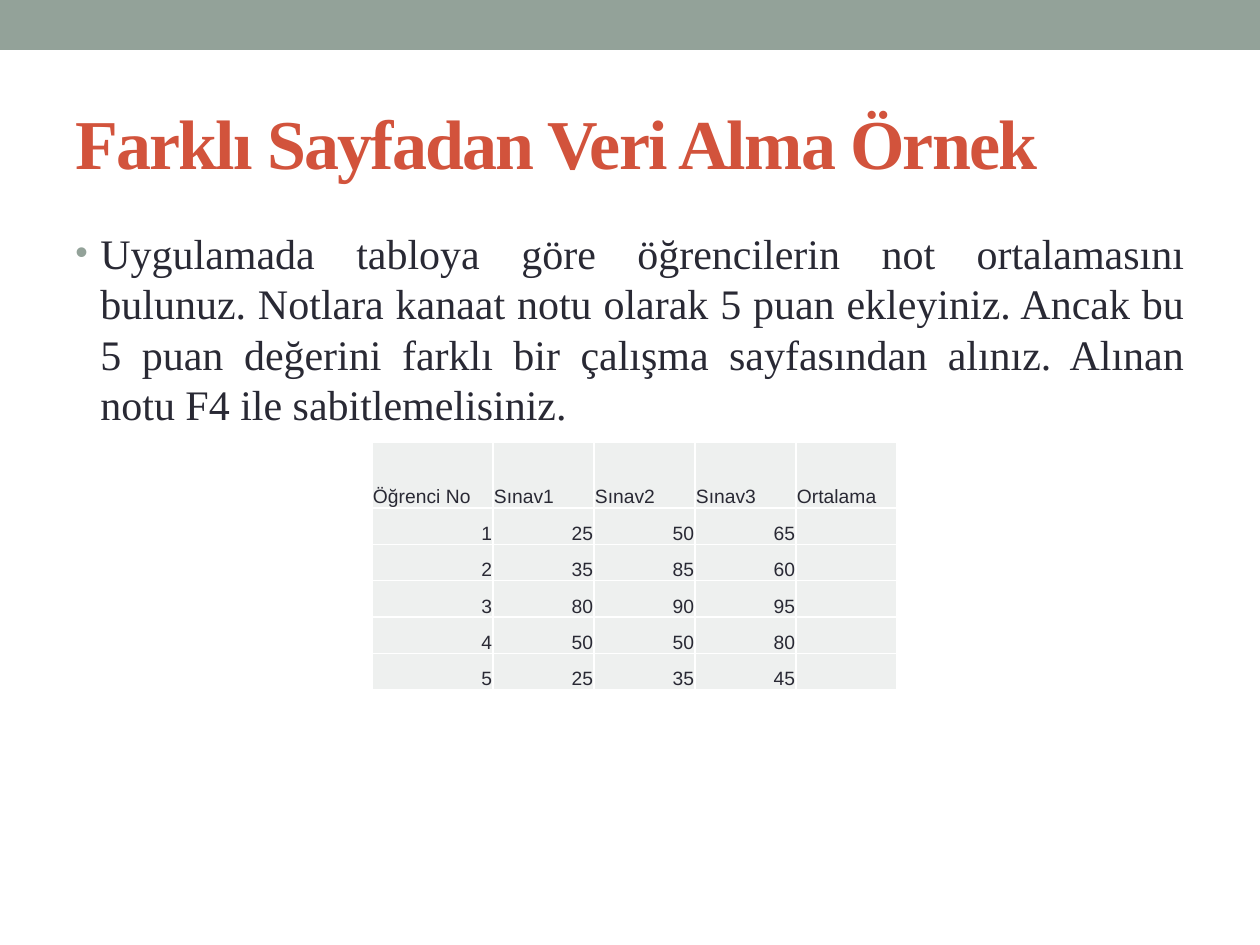
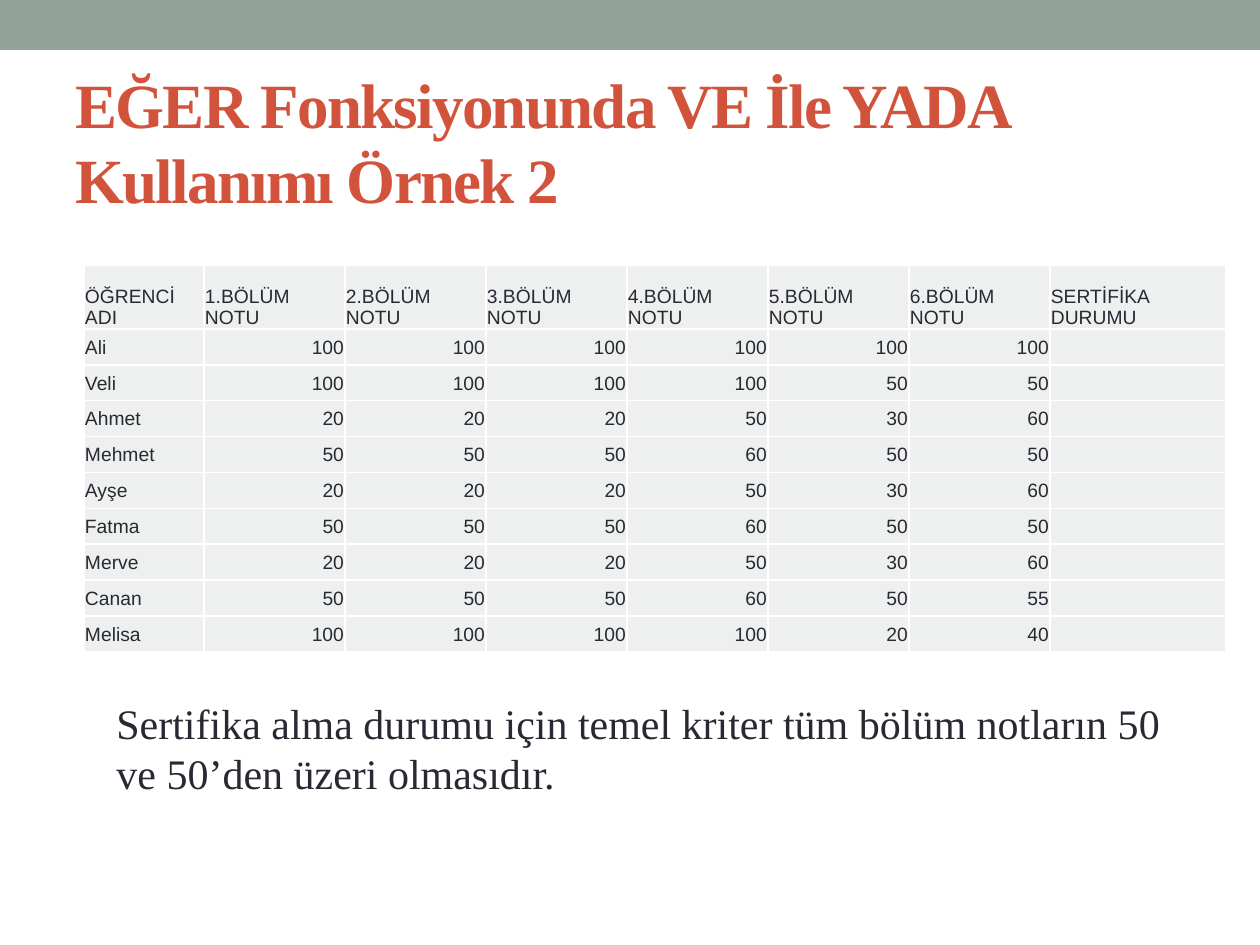
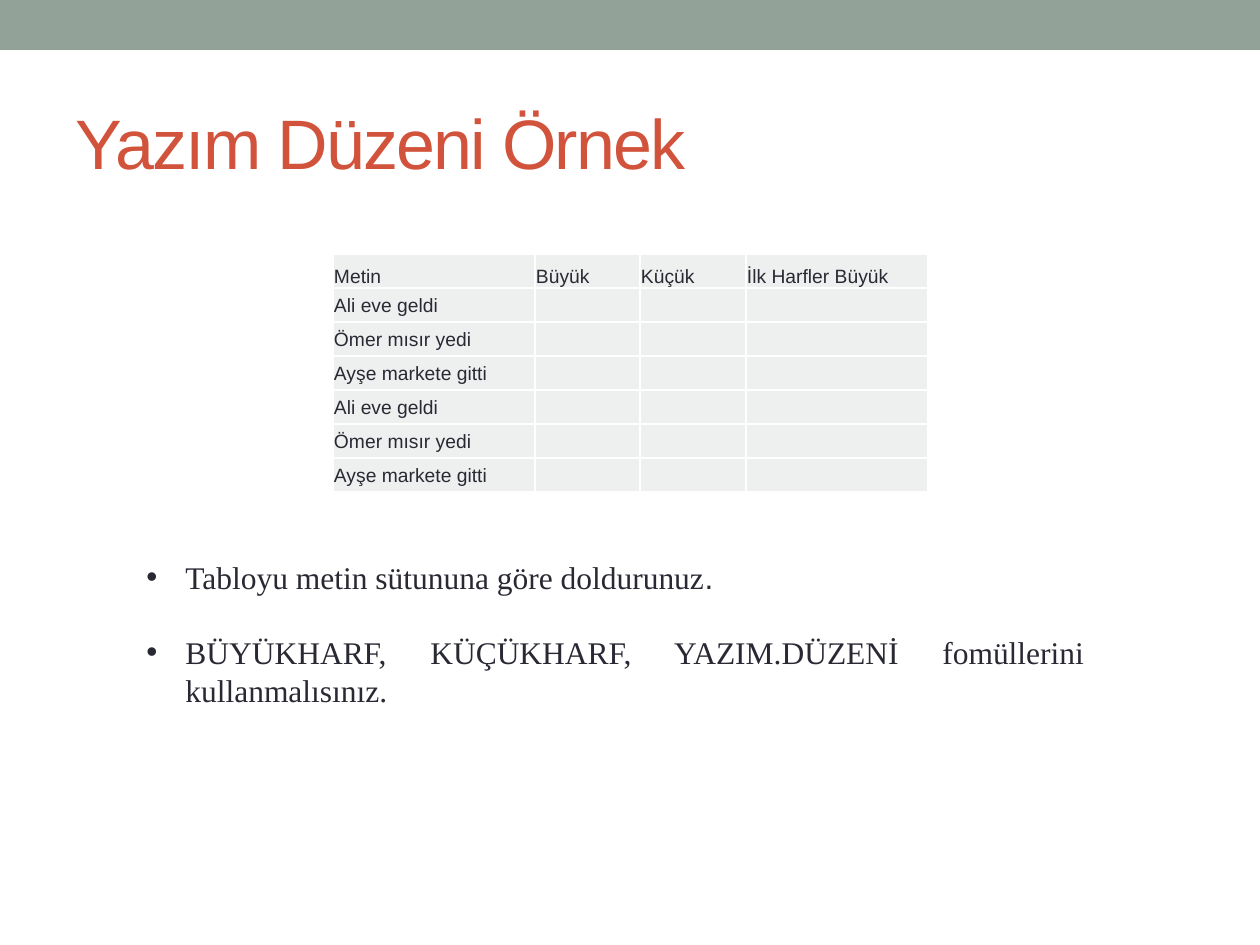
"""Build three spreadsheet exercise slides, each with a title, a table and instructions."""
from lxml.etree import SubElement
from pptx import Presentation
from pptx.dml.color import RGBColor
from pptx.enum.shapes import MSO_SHAPE
from pptx.enum.text import MSO_ANCHOR, PP_ALIGN
from pptx.oxml.ns import qn
from pptx.util import Pt

SCALE = 914400 / 126
SLIDE_SIZE = (1260, 945)
BAND_BOX = (0, 0, 1260, 50)
TITLE_BOX = (63, 73, 1134, 136)

SAGE, RUST, INK, PALE, WHITE = "93A299", "D2533C", "292934", "EEF0EF", "FFFFFF"
SERIF, SANS = "Times New Roman", "Arial"
CELL_FONT = dict(name=SANS, size=11, color=INK)

SLIDES = [
    dict(
        title=("Farklı Sayfadan Veri Alma Örnek", dict(name=SERIF, size=40, bold=True)),
        table=dict(
            place=(372, 442), columns=[121] + [101] * 4, height=248, header=66,
            anchor=MSO_ANCHOR.BOTTOM,
            rows=[
                ("Öğrenci No", "Sınav1", "Sınav2", "Sınav3", "Ortalama"),
                (1, 25, 50, 65, ""),
                (2, 35, 85, 60, ""),
                (3, 80, 90, 95, ""),
                (4, 50, 50, 80, ""),
                (5, 25, 35, 45, ""),
            ],
        ),
        text=dict(
            box=(63, 221, 1134, 671), size=24, align=PP_ALIGN.JUSTIFY,
            bullet=dict(indent=25, color=SAGE, percent=85), before=[5],
            paragraphs=[[(
                "Uygulamada tabloya göre öğrencilerin not ortalamasını bulunuz. "
                "Notlara kanaat notu olarak 5 puan ekleyiniz. Ancak bu 5 puan değerini "
                "farklı bir çalışma sayfasından alınız. Alınan notu F4 ile "
                "sabitlemelisiniz.", SERIF)]],
        ),
    ),
    dict(
        title=("EĞER Fonksiyonunda VE İle YADA Kullanımı Örnek 2",
               dict(name=SERIF, size=36, bold=True)),
        table=dict(
            place=(84, 265), columns=[120] + [141] * 6 + [176], height=387, header=64,
            anchor=MSO_ANCHOR.MIDDLE,
            rows=[
                ("ÖĞRENCİ ADI", *(f"{part}.BÖLÜM NOTU" for part in range(1, 7)),
                 "SERTİFİKA DURUMU"),
                ("Ali", 100, 100, 100, 100, 100, 100, ""),
                ("Veli", 100, 100, 100, 100, 50, 50, ""),
                ("Ahmet", 20, 20, 20, 50, 30, 60, ""),
                ("Mehmet", 50, 50, 50, 60, 50, 50, ""),
                ("Ayşe", 20, 20, 20, 50, 30, 60, ""),
                ("Fatma", 50, 50, 50, 60, 50, 50, ""),
                ("Merve", 20, 20, 20, 50, 30, 60, ""),
                ("Canan", 50, 50, 50, 60, 50, 55, ""),
                ("Melisa", 100, 100, 100, 100, 20, 40, ""),
            ],
        ),
        text=dict(
            box=(104, 691, 1101, 115), size=24, align=PP_ALIGN.LEFT,
            bullet=None, before=[0],
            paragraphs=[[(
                "Sertifika alma durumu için temel kriter tüm bölüm notların 50 "
                "ve 50’den üzeri olmasıdır.", SERIF)]],
        ),
    ),
    dict(
        title=("Yazım Düzeni Örnek", dict(name=SANS, size=40, bold=False)),
        table=dict(
            place=(333, 254), columns=[202, 105, 106, 182], height=238, header=34,
            anchor=MSO_ANCHOR.MIDDLE,
            rows=[("Metin", "Büyük", "Küçük", "İlk Harfler Büyük")] + [
                (sentence, "", "", "")
                for sentence in ("Ali eve geldi", "Ömer mısır yedi", "Ayşe markete gitti") * 2
            ],
        ),
        text=dict(
            box=(134, 552, 963, 204), size=18, align=PP_ALIGN.JUSTIFY,
            bullet=dict(indent=39, color=INK, percent=100), before=[0, 21],
            paragraphs=[
                [("Tabloyu metin sütununa göre doldurunuz", SERIF), (".", SANS)],
                [("BÜYÜKHARF, KÜÇÜKHARF, YAZIM.DÜZENİ fomüllerini kullanmalısınız.", SERIF)],
            ],
        ),
    ),
]


def px(length):
    return round(length * SCALE)


def rgb(color):
    return RGBColor.from_string(color)


def assign(target, values):
    for attribute, value in values.items():
        setattr(target, attribute, value)


def style(font, name, size, color, bold=False):
    assign(font, dict(name=name, size=Pt(size), bold=bold))
    font.color.rgb = rgb(color)


def add_run(paragraph, words, **look):
    run = paragraph.add_run()
    run.text = words
    style(run.font, **look)
    return run


def add_frame(slide, box, anchor):
    frame = slide.shapes.add_textbox(*map(px, box)).text_frame
    assign(frame, dict(word_wrap=True, vertical_anchor=anchor))
    return frame


def add_band(slide):
    band = slide.shapes.add_shape(MSO_SHAPE.RECTANGLE, *map(px, BAND_BOX))
    band.shadow.inherit = False
    band.fill.solid()
    band.fill.fore_color.rgb = rgb(SAGE)
    band.line.fill.background()


def add_title(slide, words, look):
    frame = add_frame(slide, TITLE_BOX, MSO_ANCHOR.MIDDLE)
    run = add_run(frame.paragraphs[0], words, color=RUST, **look)
    run.font._element.set("spc", "-100")


def add_bullet(paragraph, indent, color, percent):
    properties = paragraph._p.get_or_add_pPr()
    properties.set("marL", str(px(indent)))
    properties.set("indent", str(-px(indent)))
    SubElement(SubElement(properties, qn("a:buClr")), qn("a:srgbClr"), val=color)
    SubElement(properties, qn("a:buSzPct"), val=str(percent * 1000))
    SubElement(properties, qn("a:buFont"), typeface=SANS)
    SubElement(properties, qn("a:buChar"), char="•")


def add_text(slide, box, size, align, bullet, before, paragraphs):
    frame = add_frame(slide, box, MSO_ANCHOR.TOP)
    for index, (runs, gap) in enumerate(zip(paragraphs, before)):
        paragraph = frame.add_paragraph() if index else frame.paragraphs[0]
        assign(paragraph, dict(alignment=align, space_before=Pt(gap)))
        if bullet:
            add_bullet(paragraph, **bullet)
        for words, name in runs:
            add_run(paragraph, words, name=name, size=size, color=INK)


def fill_cell(cell, value, anchor):
    assign(cell, dict(margin_left=px(1), margin_right=px(1), margin_top=px(1),
                      margin_bottom=0, vertical_anchor=anchor))
    properties = cell._tc.get_or_add_tcPr()
    for side in ("lnL", "lnR", "lnT", "lnB"):
        border = SubElement(properties, qn(f"a:{side}"), w=str(Pt(1)))
        SubElement(SubElement(border, qn("a:solidFill")), qn("a:srgbClr"), val=WHITE)
    cell.fill.solid()
    cell.fill.fore_color.rgb = rgb(PALE)
    paragraph = cell.text_frame.paragraphs[0]
    if value == "":
        SubElement(paragraph._p, qn("a:endParaRPr"), sz=str(CELL_FONT["size"] * 100))
    else:
        paragraph.alignment = PP_ALIGN.RIGHT if isinstance(value, int) else PP_ALIGN.LEFT
        add_run(paragraph, str(value), **CELL_FONT)


def add_grid(slide, place, columns, height, header, anchor, rows):
    box = (*place, sum(columns), height)
    grid = slide.shapes.add_table(len(rows), len(columns), *map(px, box)).table
    assign(grid, dict(first_row=False, horz_banding=False))
    for column, width in zip(grid.columns, columns):
        column.width = px(width)
    body_height = (height - header) / (len(rows) - 1)
    for index, (row, values) in enumerate(zip(grid.rows, rows)):
        row.height = px(body_height if index else header)
        for cell, value in zip(row.cells, values):
            fill_cell(cell, value, anchor if index else MSO_ANCHOR.BOTTOM)


def main():
    deck = Presentation()
    assign(deck, dict(zip(("slide_width", "slide_height"), map(px, SLIDE_SIZE))))
    for content in SLIDES:
        slide = deck.slides.add_slide(deck.slide_layouts[6])
        add_band(slide)
        add_title(slide, *content["title"])
        add_grid(slide, **content["table"])
        add_text(slide, **content["text"])
    deck.save("out.pptx")


if __name__ == "__main__":
    main()
